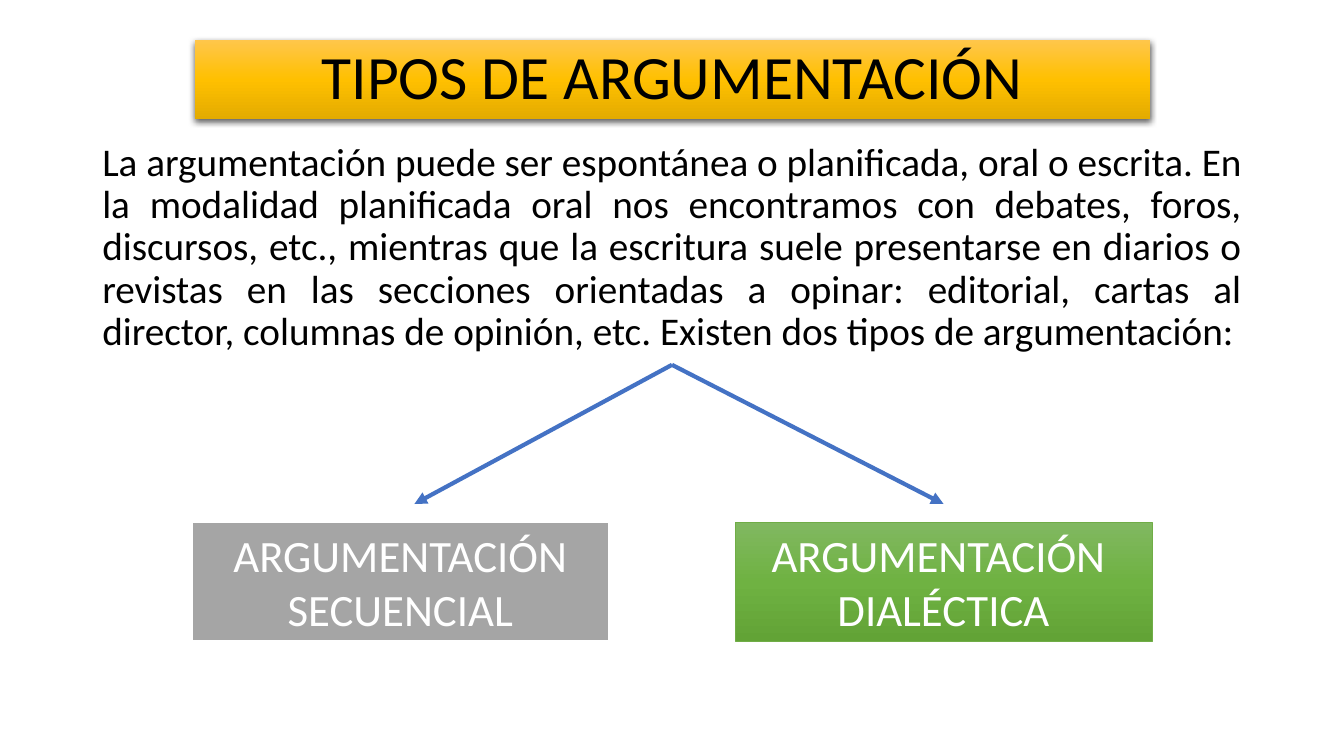
from lxml import etree
from pptx import Presentation
from pptx.dml.color import RGBColor
from pptx.enum.shapes import MSO_CONNECTOR, MSO_SHAPE
from pptx.enum.text import MSO_ANCHOR, PP_ALIGN
from pptx.oxml.ns import qn
from pptx.util import Pt

RECT = MSO_SHAPE.RECTANGLE
LINE = MSO_CONNECTOR.STRAIGHT
TOP, MID = MSO_ANCHOR.TOP, MSO_ANCHOR.MIDDLE
CENTER, JUST = PP_ALIGN.CENTER, PP_ALIGN.JUSTIFY
FONT = "Calibri"
HEX = {
    "black": "000000", "white": "FFFFFF", "gray": "A5A5A5",
    "edge": "70AD47", "blue": "4472C4",
    "gold1": "FFC64B", "gold2": "FFC000", "gold3": "E3AB00",
    "green1": "81B861", "green2": "6FB242", "green3": "62A336",
}
INTRO = (
    "La argumentación puede ser espontánea o planificada, oral o escrita. "
    "En la modalidad planificada oral nos encontramos con debates, foros, "
    "discursos, etc., mientras que la escritura suele presentarse en diarios o "
    "revistas en las secciones orientadas a opinar: editorial, cartas al "
    "director, columnas de opinión, etc. Existen dos tipos de argumentación:"
)


def rgb(name):
    return RGBColor.from_string(HEX[name])


def node(parent, tag, **attrs):
    return etree.SubElement(parent, qn(tag), attrs)


def write(frame, lines, size, color, align, anchor, space=1.0):
    frame.word_wrap = True
    frame.vertical_anchor = anchor
    for i, line in enumerate(lines):
        para = frame.paragraphs[0] if i == 0 else frame.add_paragraph()
        para.alignment, para.line_spacing = align, space
        run = para.add_run()
        run.text = line
        run.font.name, run.font.size = FONT, Pt(size)
        run.font.color.rgb = rgb(color)


def paint(shape, colors):
    """Fill with one colour, or with an even top-down gradient."""
    if len(colors) == 1:
        shape.fill.solid()
        shape.fill.fore_color.rgb = rgb(colors[0])
        return
    shape.fill.gradient()
    shape.fill.gradient_angle = 270
    stops = shape.element.spPr.find(".//" + qn("a:gsLst"))
    stops.clear()
    for i, name in enumerate(colors):
        stop = node(stops, "a:gs", pos=str(100000 * i // (len(colors) - 1)))
        node(stop, "a:srgbClr", val=HEX[name])


def add_box(slide, area, colors, edge=None, width=0):
    box = slide.shapes.add_shape(RECT, *map(Pt, area))
    box.shadow.inherit = False
    paint(box, colors)
    if edge:
        box.line.color.rgb = rgb(edge)
        box.line.width = Pt(width)
    else:
        box.line.fill.background()
    return box


def add_shade(shape):
    effects = shape.element.spPr.find(qn("a:effectLst"))
    shade = node(effects, "a:outerShdw", blurRad=str(Pt(4.5)),
                 dist=str(Pt(1.5)), dir="5400000", algn="ctr", rotWithShape="0")
    color = node(shade, "a:srgbClr", val=HEX["black"])
    node(color, "a:alpha", val="63000")


def add_arrow(slide, start, end):
    arrow = slide.shapes.add_connector(LINE, *map(Pt, start + end))
    arrow.line.color.rgb = rgb("blue")
    arrow.line.width = Pt(3)
    node(arrow.line._get_or_add_ln(), "a:tailEnd", type="triangle")
    node(arrow.element.spPr, "a:effectLst")


def main():
    deck = Presentation()
    deck.slide_width, deck.slide_height = Pt(960), Pt(540)
    slide = deck.slides.add_slide(deck.slide_layouts[6])

    # Title banner
    title = add_box(slide, (139, 28.8, 682.6, 56.2), ("gold1", "gold2", "gold3"))
    add_shade(title)
    write(title.text_frame, ["TIPOS DE ARGUMENTACIÓN"], 44, "black", CENTER, MID, 0.9)

    # Introduction
    intro = slide.shapes.add_textbox(*map(Pt, (66, 98, 828, 162.6)))
    write(intro.text_frame, [INTRO], 28, "black", JUST, TOP, 0.9)

    # The two types, each with its arrow
    types = (
        (137, ("gray",), "white", 1.5, ["ARGUMENTACIÓN", "SECUENCIAL"], 296),
        (525, ("green1", "green2", "green3"), "edge", 0.5,
         ["ARGUMENTACIÓN ", "DIALÉCTICA"], 674),
    )
    for left, colors, edge, width, lines, tip in types:
        box = add_box(slide, (left, 373, 298, 84.8), colors, edge, width)
        write(box.text_frame, lines, 32, "white", CENTER, MID)
        add_arrow(slide, (480, 260.6), (tip, 360))

    deck.save("out.pptx")


if __name__ == "__main__":
    main()
